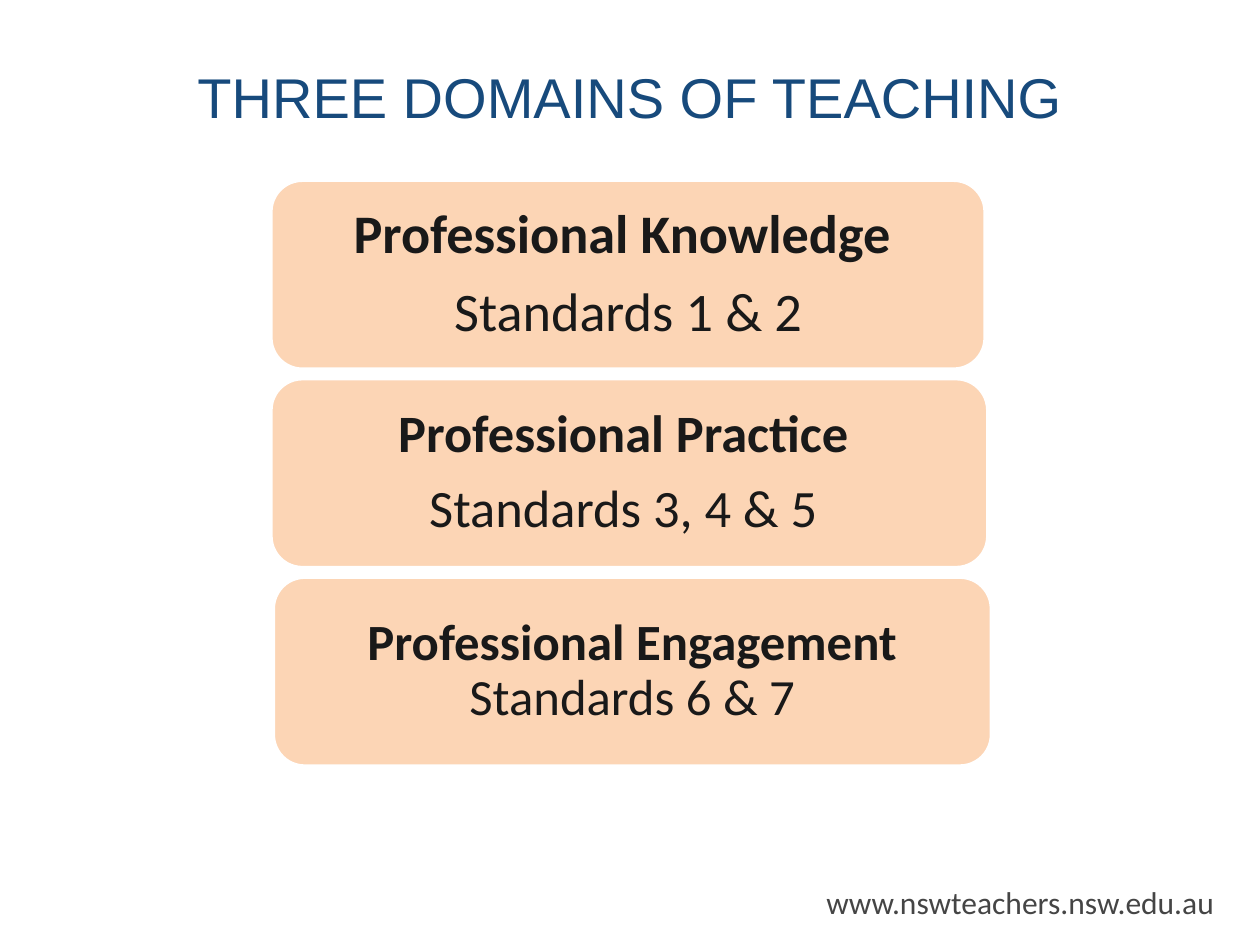
import pptx
import pptx.dml.color
import pptx.enum.shapes
import pptx.enum.text
import pptx.util

Pt = pptx.util.Pt
RGBColor = pptx.dml.color.RGBColor
MSO_SHAPE = pptx.enum.shapes.MSO_SHAPE
ALIGN = pptx.enum.text.PP_ALIGN
ANCHOR = pptx.enum.text.MSO_ANCHOR
AUTO_SIZE = pptx.enum.text.MSO_AUTO_SIZE

NAVY = RGBColor(0x17, 0x4A, 0x7C)
PEACH = RGBColor(0xFC, 0xD5, 0xB5)
INK = RGBColor(0x19, 0x19, 0x19)
GREY = RGBColor(0x45, 0x45, 0x45)
WHITE = RGBColor(0xFF, 0xFF, 0xFF)

CARD_TOP, CARD_HEIGHT, CARD_PITCH = 103, 108, 113.4

# left, width, text size, paragraphs made of (text, bold) runs
DOMAINS = [
    (154.8, 408.2, 31, [[("Professional Knowledge ", True)],
                        [("Standards 1 & 2", False)]]),
    (154.8, 409.7, 30, [[("Professional Practice ", True)],
                        [("Standards 3, 4 & 5 ", False)]]),
    (156.2, 410.4, 29, [[("Professional Engagement ", True),
                         ("Standards 6 & 7", False)]]),
]


def apply(target, **values):
    """Set each value as an attribute of target."""
    for name, value in values.items():
        setattr(target, name, value)


class DomainSlide:
    """Holds the text style and the slide being built."""

    heading_font = "Arial"
    body_font = "Calibri"

    def __init__(self, deck):
        self.slide = deck.slides.add_slide(deck.slide_layouts[5])

    def add_text(self, paragraph, text, size, color, font, bold=False):
        run = paragraph.add_run()
        run.text = text
        apply(run.font, size=Pt(size), name=font, bold=bold)
        run.font.color.rgb = color

    def shape(self, preset, left, top, width, height, fill):
        shape = self.slide.shapes.add_shape(
            preset, Pt(left), Pt(top), Pt(width), Pt(height))
        shape.shadow.inherit = False
        shape.fill.solid()
        shape.fill.fore_color.rgb = fill
        return shape

    def title(self, text):
        title = self.slide.shapes.title
        apply(title, left=Pt(36), top=Pt(31), width=Pt(648), height=Pt(47.5))
        apply(title.text_frame, vertical_anchor=ANCHOR.MIDDLE,
              auto_size=AUTO_SIZE.NONE)
        heading = title.text_frame.paragraphs[0]
        heading.alignment = ALIGN.CENTER
        self.add_text(heading, text, 32, NAVY, self.heading_font)

    def card(self, left, top, width, size, paragraphs):
        card = self.shape(MSO_SHAPE.ROUNDED_RECTANGLE,
                          left, top, width, CARD_HEIGHT, PEACH)
        card.line.color.rgb = WHITE
        card.line.width = Pt(2)
        frame = card.text_frame
        apply(frame, word_wrap=True, vertical_anchor=ANCHOR.MIDDLE,
              margin_left=Pt(9), margin_right=Pt(9),
              margin_top=Pt(4.5), margin_bottom=Pt(4.5))
        for index, runs in enumerate(paragraphs):
            paragraph = frame.add_paragraph() if index else frame.paragraphs[0]
            apply(paragraph, alignment=ALIGN.CENTER, line_spacing=0.9,
                  space_after=Pt(round(size * 0.35, 1)))
            for text, bold in runs:
                self.add_text(paragraph, text, size, INK, self.body_font, bold)

    def web_address(self, text):
        footer = self.shape(MSO_SHAPE.RECTANGLE, 465.1, 501.1, 238.3, 29, WHITE)
        footer.line.fill.background()
        apply(footer.text_frame, word_wrap=False, vertical_anchor=ANCHOR.TOP,
              auto_size=AUTO_SIZE.SHAPE_TO_FIT_TEXT)
        address = footer.text_frame.paragraphs[0]
        address.alignment = ALIGN.LEFT
        self.add_text(address, text, 18, GREY, self.body_font)


def main():
    deck = pptx.Presentation()
    apply(deck, slide_width=Pt(720), slide_height=Pt(540))
    page = DomainSlide(deck)
    page.title("THREE DOMAINS OF TEACHING")
    for row, (left, width, size, paragraphs) in enumerate(DOMAINS):
        page.card(left, CARD_TOP + row * CARD_PITCH, width, size, paragraphs)
    page.web_address("www.nswteachers.nsw.edu.au")
    deck.save("out.pptx")


if __name__ == "__main__":
    main()
